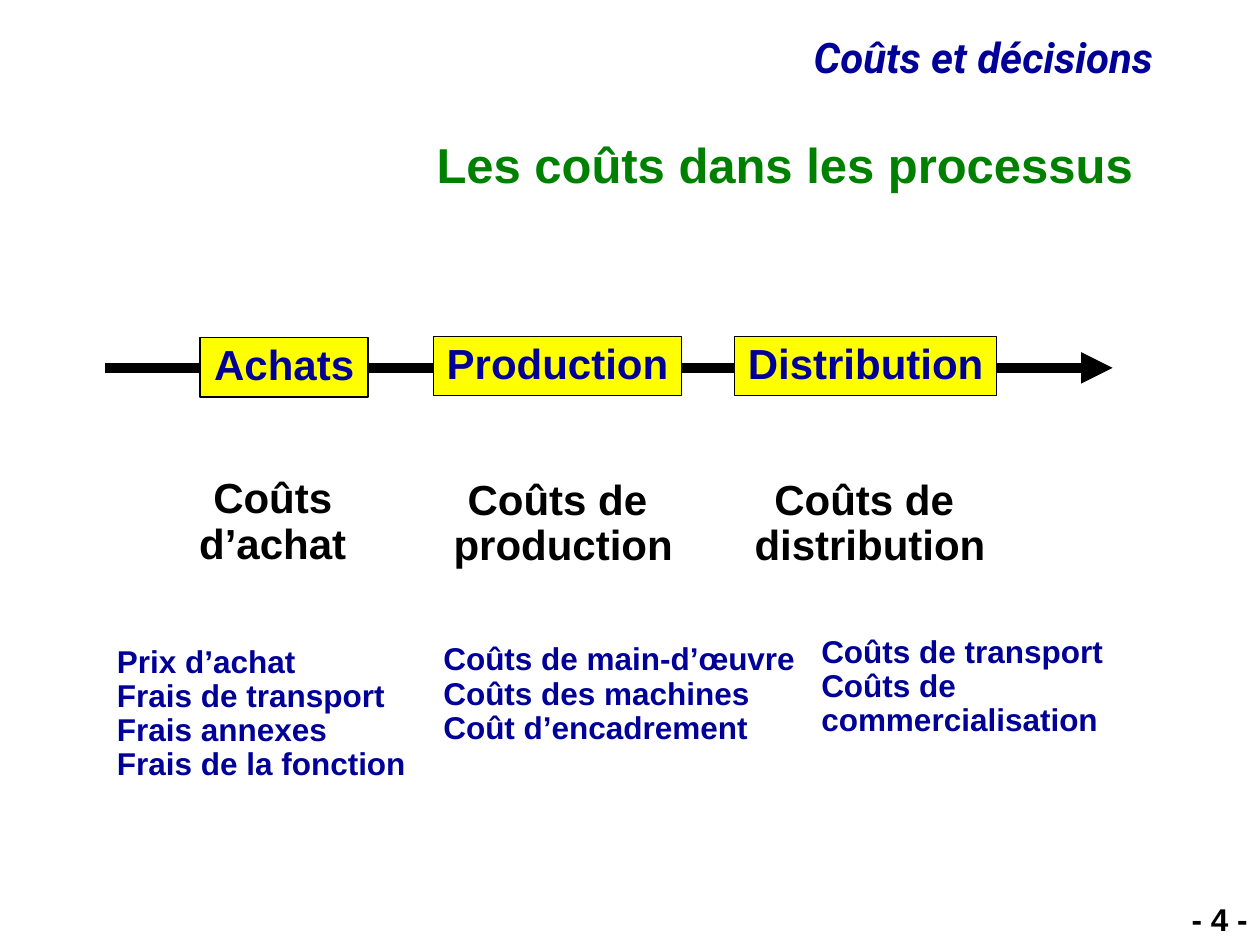
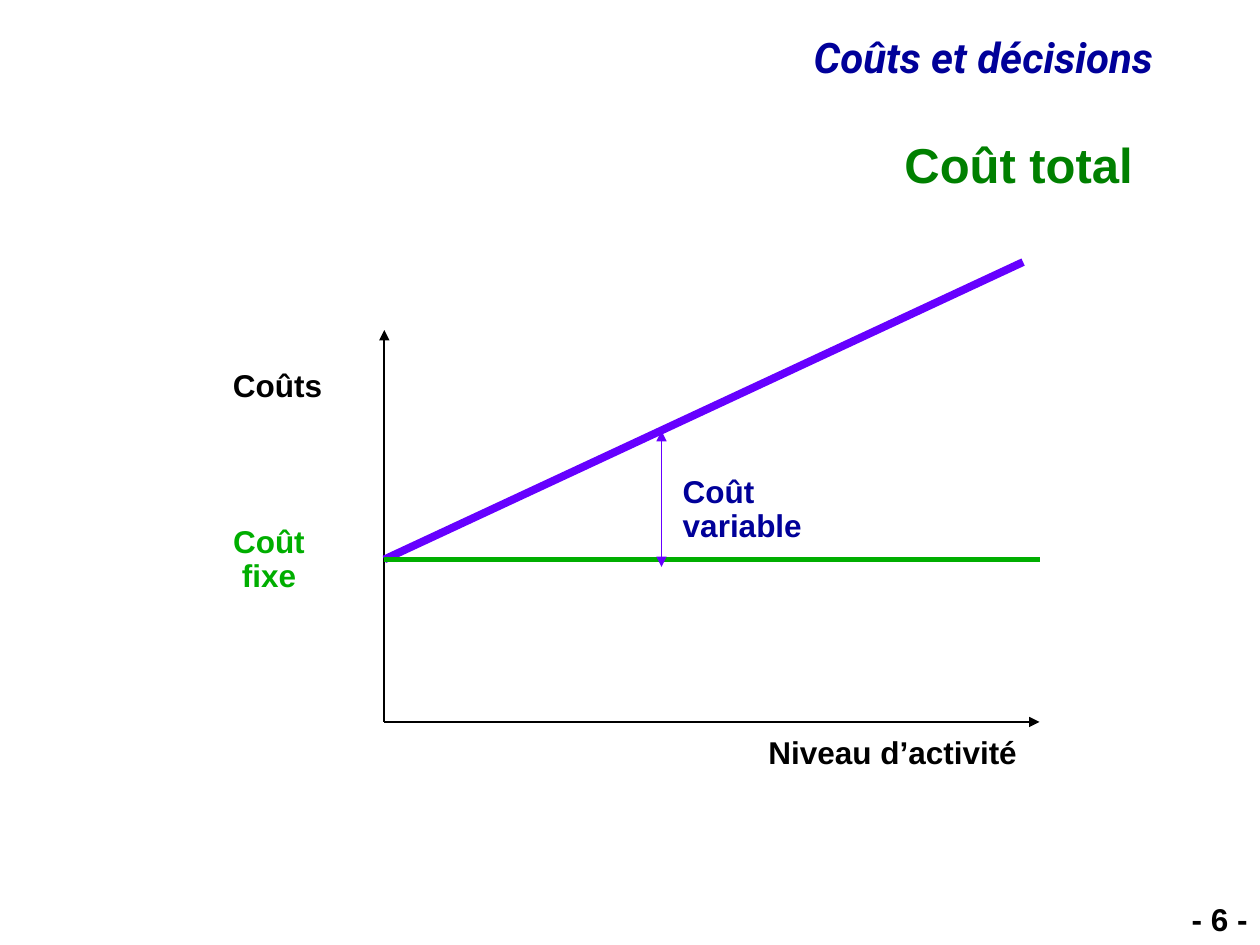
from dataclasses import dataclass
from lxml.etree import SubElement
from pptx import Presentation
from pptx.dml.color import RGBColor
from pptx.enum.shapes import MSO_CONNECTOR, MSO_SHAPE
from pptx.enum.text import MSO_ANCHOR, MSO_AUTO_SIZE, PP_ALIGN
from pptx.oxml.ns import qn
from pptx.slide import Slide
from pptx.text.text import TextFrame
from pptx.util import Inches, Pt


# Shared look
@dataclass(frozen=True)
class Theme:
    navy: str = "000099"
    green: str = "008000"
    lime: str = "00AE00"
    violet: str = "6600FF"
    yellow: str = "FFFF00"
    black: str = "000000"
    font: str = "Arial"
    brand: str = "Roboto"
    title: int = 28
    large: int = 24
    small: int = 18
    pitch: float = 0.9


THEME = Theme()
LEFT, MID, RIGHT = PP_ALIGN.LEFT, PP_ALIGN.CENTER, PP_ALIGN.RIGHT
Spot = tuple[float, float]
Area = tuple[float, float, float, float]


@dataclass(frozen=True)
class Label:
    text: str
    area: Area
    color: str = THEME.black
    size: int = THEME.small
    align: PP_ALIGN = LEFT
    font: str = THEME.font
    italic: bool = False
    wrap: bool = False
    fill: str = ""


@dataclass(frozen=True)
class Line:
    start: Spot
    end: Spot
    color: str = THEME.black
    width: float = 1
    heads: tuple[str, ...] = ()


@dataclass(frozen=True)
class Stage:
    name: str
    box: Area
    cost: str
    cost_area: Area
    items: str
    list_area: Area


# Drawing tools
def set_text(frame: TextFrame, label: Label) -> None:
    frame.text = label.text
    frame.word_wrap = label.wrap
    for para in frame.paragraphs:
        para.alignment = label.align
        para.line_spacing = THEME.pitch
        font = para.font
        font.name, font.size = label.font, Pt(label.size)
        font.bold, font.italic = True, label.italic
        font.color.rgb = RGBColor.from_string(label.color)


def add_label(slide: Slide, label: Label) -> None:
    area = [Inches(n) for n in label.area]
    if label.fill:
        shape = slide.shapes.add_shape(MSO_SHAPE.RECTANGLE, *area)
        shape.shadow.inherit = False
        shape.fill.solid()
        shape.fill.fore_color.rgb = RGBColor.from_string(label.fill)
        shape.line.color.rgb = RGBColor.from_string(THEME.black)
        shape.line.width = Pt(1)
        shape.text_frame.vertical_anchor = MSO_ANCHOR.MIDDLE
    else:
        shape = slide.shapes.add_textbox(*area)
    set_text(shape.text_frame, label)
    shape.text_frame.auto_size = MSO_AUTO_SIZE.SHAPE_TO_FIT_TEXT


def add_line(slide: Slide, line: Line) -> None:
    ends = [Inches(n) for n in line.start + line.end]
    shape = slide.shapes.add_connector(MSO_CONNECTOR.STRAIGHT, *ends)
    shape.line.color.rgb = RGBColor.from_string(line.color)
    shape.line.width = Pt(line.width)
    props = shape._element.spPr
    for head in line.heads:
        SubElement(props.find(qn("a:ln")), qn(f"a:{head}"), type="triangle")
    SubElement(props, qn("a:effectLst"))


def add_page(deck: Presentation, title: str, number: int) -> Slide:
    slide = deck.slides.add_slide(deck.slide_layouts[5])
    add_label(slide, Label("Coûts et décisions", (1.25, 0.25, 8, 0.46), THEME.navy,
                           THEME.large, RIGHT, THEME.brand, italic=True, wrap=True))
    add_label(slide, Label(f"- {number} -", (9.09, 7.13, 0.91, 0.37),
                           align=RIGHT, wrap=True))
    label = Label(title, (1.17, 1.08, 7.92, 0.5), THEME.green, THEME.title, RIGHT,
                  wrap=True)
    head = slide.shapes.title
    head.left, head.top, head.width, head.height = (Inches(n) for n in label.area)
    set_text(head.text_frame, label)
    head.text_frame.auto_size = MSO_AUTO_SIZE.NONE
    head.text_frame.vertical_anchor = MSO_ANCHOR.MIDDLE
    return slide


# Process slide
STAGES = (
    Stage("Achats", (1.59, 2.68, 1.33, 0.47),
          "Coûts\nd’achat", (1.48, 3.74, 1.37, 0.82),
          "Prix d’achat\nFrais de transport\nFrais annexes\nFrais de la fonction",
          (0.83, 5.08, 2.49, 1.18)),
    Stage("Production", (3.44, 2.67, 1.97, 0.47),
          "Coûts de \vproduction", (3.5, 3.75, 1.94, 0.82),
          "Coûts de main-d’œuvre\nCoûts des machines\nCoût d’encadrement",
          (3.42, 5.06, 2.99, 0.91)),
    Stage("Distribution", (5.83, 2.67, 2.08, 0.47),
          "Coûts de \vdistribution", (5.89, 3.75, 2.03, 0.82),
          "Coûts de transport\nCoûts de commercialisation",
          (6.42, 5, 3.53, 0.64)),
)


def add_process(deck: Presentation) -> None:
    slide = add_page(deck, "Les coûts dans les processus", 4)
    add_line(slide, Line((0.83, 2.92), (8.83, 2.92), width=6, heads=("tailEnd",)))
    for stage in STAGES:
        add_label(slide, Label(stage.name, stage.box, THEME.navy, THEME.large, MID,
                               fill=THEME.yellow))
        add_label(slide, Label(stage.cost, stage.cost_area, size=THEME.large, align=MID))
        add_label(slide, Label(stage.items, stage.list_area, THEME.navy))


# Total cost slide
def add_total(deck: Presentation) -> None:
    slide = add_page(deck, "Coût total", 6)
    left, right, base, fixed = 3.05, 8.25, 5.73, 4.44
    lines = (
        Line((left, base), (left, 2.62), heads=("tailEnd",)),
        Line((left, base), (right, base), heads=("tailEnd",)),
        Line((left, fixed), (8.12, 2.08), THEME.violet, 4.5),
        Line((left, fixed), (right, fixed), THEME.lime, 3),
        Line((5.25, 3.42), (5.25, 4.5), THEME.violet, heads=("headEnd", "tailEnd")),
    )
    labels = (
        Label("Coûts", (1.75, 2.89, 0.91, 0.37)),
        Label("Niveau d’activité", (6, 5.8, 2.17, 0.37)),
        Label("Coût\nfixe", (1.75, 4.13, 0.77, 0.64), THEME.lime, align=MID),
        Label("Coût variable", (5.32, 3.73, 1.78, 0.37), THEME.navy),
    )
    for line in lines:
        add_line(slide, line)
    for label in labels:
        add_label(slide, label)


def main() -> None:
    deck = Presentation()
    deck.slide_width, deck.slide_height = Inches(10), Inches(7.5)
    add_process(deck)
    add_total(deck)
    deck.save("out.pptx")


if __name__ == "__main__":
    main()
